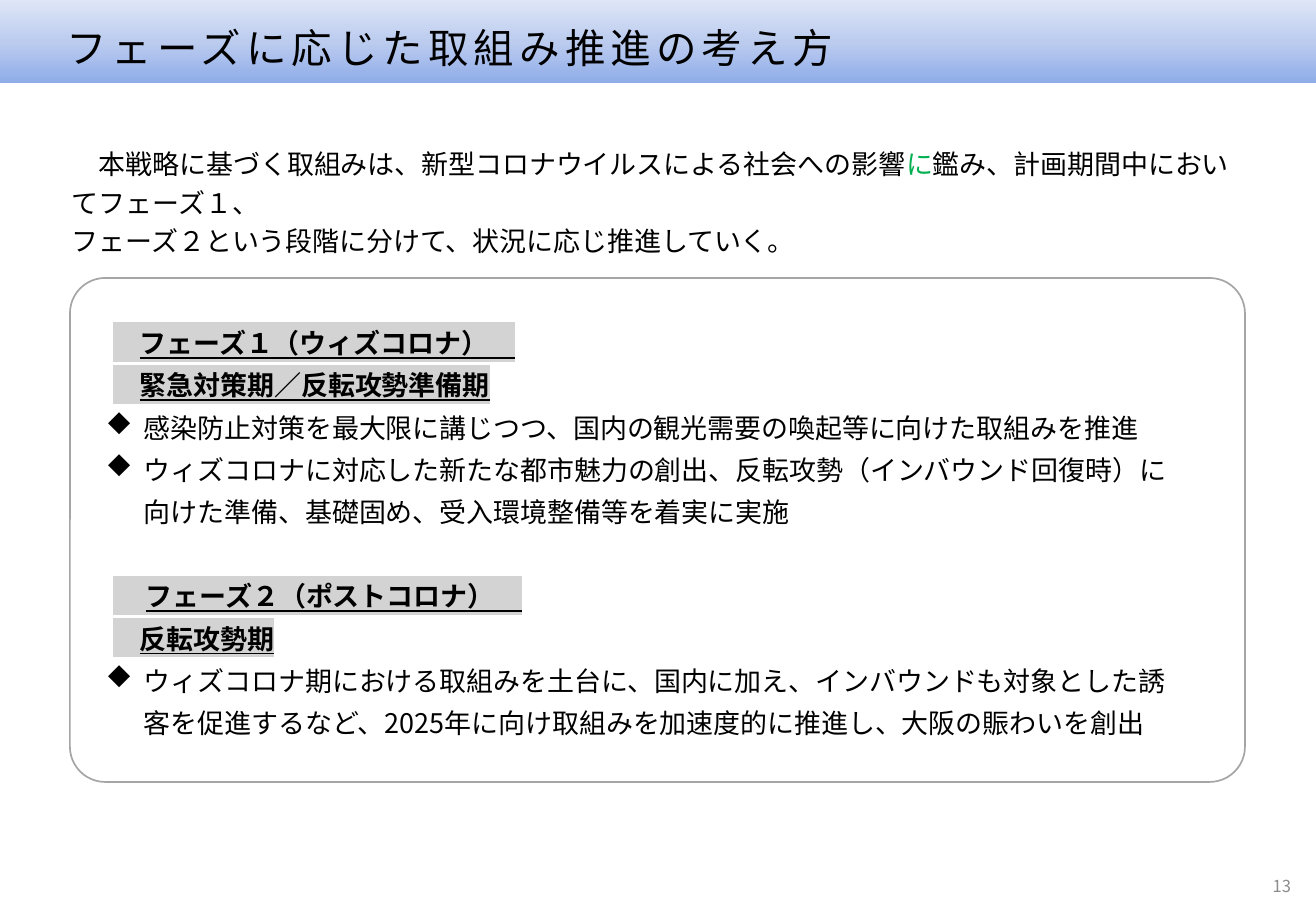
from copy import deepcopy

from pptx import Presentation
from pptx import util as u
from pptx.dml.color import RGBColor
from pptx.enum import shapes, text
from pptx.oxml.ns import qn
from lxml import etree

SCALE = 914400 / 121.5


def px(length):
    return u.Emu(round(length * SCALE))


def colour(value):
    return RGBColor.from_string(value)


def add_child(parent, tag, **attributes):
    return etree.SubElement(parent, qn(tag), attributes)


def assign(target, values):
    for name, value in values.items():
        setattr(target, name, value)


class PhasePage:
    """Holds the style and the current slide, and draws its elements."""

    font = "Noto Sans CJK JP"
    ink = "000000"
    size = 16

    def __init__(self, deck):
        self.page = deck.slides.add_slide(deck.slide_layouts[6])

    def shape(self, kind, bounds):
        box = self.page.shapes.add_shape(kind, *map(px, bounds))
        box.shadow.inherit = False
        return box

    def outline(self, bounds, line, width, corner):
        box = self.shape(shapes.MSO_SHAPE.ROUNDED_RECTANGLE, bounds)
        box.adjustments[0] = corner
        box.fill.background()
        box.line.color.rgb = colour(line)
        box.line.width = u.Pt(width)

    def band(self, bounds, stops):
        box = self.shape(shapes.MSO_SHAPE.RECTANGLE, bounds)
        box.line.fill.background()
        box.fill.gradient()
        box.fill.gradient_angle = 90
        stop_list = box._element.spPr.find(".//" + qn("a:gsLst"))
        while len(stop_list) < len(stops):
            stop_list.append(deepcopy(stop_list[0]))
        for stop, (position, value) in zip(box.fill.gradient_stops, stops):
            stop.position = position
            stop.color.rgb = colour(value)
        box.text_frame.vertical_anchor = text.MSO_ANCHOR.MIDDLE
        return box.text_frame

    def text_box(self, bounds):
        frame = self.page.shapes.add_textbox(*map(px, bounds)).text_frame
        frame.word_wrap = True
        return frame

    def span(self, para, words, ink=None, highlight=None, spacing=None, **style):
        span = para.add_run()
        span.text = words
        span.font.color.rgb = colour(ink or self.ink)
        properties = span._r.get_or_add_rPr()
        if highlight:
            add_child(add_child(properties, "a:highlight"), "a:srgbClr", val=highlight)
        if spacing:
            properties.set("spc", str(spacing * 100))
        assign(span.font, {"name": self.font, "size": u.Pt(self.size)} | style)
        add_child(properties, "a:ea", typeface=self.font)

    def para(self, frame, spans, margin=0, bullet=False, **layout):
        para = frame.paragraphs[0]
        if para.runs:
            para = frame.add_paragraph()
        assign(para, {"alignment": text.PP_ALIGN.LEFT} | layout)
        properties = para._p.get_or_add_pPr()
        properties.set("marL", str(px(margin)))
        properties.set("indent", str(px(-margin if bullet else 0)))
        if bullet:
            add_child(properties, "a:buFont", typeface="Wingdings", charset="2")
            add_child(properties, "a:buChar", char="u")
        for words, style in spans:
            self.span(para, words, **style)

    def phase(self, frame, headings, points, gap=0):
        pitch = u.Pt(25)
        label = {"bold": True, "highlight": "D3D3D3"}
        for index, (lead, heading) in enumerate(headings):
            self.para(frame, [(lead, label), (heading, label | {"underline": True})],
                      margin=7, line_spacing=pitch,
                      space_before=u.Pt(0 if index else gap))
        for point in points:
            self.para(frame, [(point, {})], margin=38, bullet=True, line_spacing=pitch)


def main():
    deck = Presentation()
    deck.slide_width, deck.slide_height = px(1316), px(911)
    page = PhasePage(deck)

    number = page.text_box((1007, 861, 296, 49))
    number.vertical_anchor = text.MSO_ANCHOR.MIDDLE
    page.para(number, [("13", {"ink": "8C8C8C", "size": u.Pt(9.8)})],
              alignment=text.PP_ALIGN.RIGHT)

    page.outline((70, 278, 1175, 504), "A5A5A5", 1, 0.07)
    phases = page.text_box((94, 311, 1098, 439))
    page.phase(phases,
               [("　", "フェーズ１（ウィズコロナ）　"), ("　", "緊急対策期／反転攻勢準備期")],
               ["感染防止対策を最大限に講じつつ、国内の観光需要の喚起等に向けた取組みを推進",
                "ウィズコロナに対応した新たな都市魅力の創出、反転攻勢（インバウンド回復時）に"
                "向けた準備、基礎固め、受入環境整備等を着実に実施"])
    page.phase(phases,
               [(" 　", "フェーズ２（ポストコロナ）　"), ("　", "反転攻勢期")],
               ["ウィズコロナ期における取組みを土台に、国内に加え、インバウンドも対象とした"
                "誘客を促進するなど、2025年に向け取組みを加速度的に推進し、大阪の賑わいを創出"],
               gap=25)

    title = page.band((0, 0, 1316, 83), [(0, "8FADE9"), (0.5, "BCCCEF"), (1, "DEE6F7")])
    page.para(title, [("　", {"size": u.Pt(32)}),
                      ("フェーズに応じた取組み推進の考え方", {"size": u.Pt(24), "spacing": 3})])

    intro = page.text_box((60, 135, 1185, 91))
    for spans in (
        [("　本戦略に基づく取組みは、新型コロナウイルスによる社会への影響", {}),
         ("に", {"ink": "00B050"}),
         ("鑑み、計画期間中においてフェーズ１、", {})],
        [("フェーズ２という段階に分けて、状況に応じ推進していく。", {})],
    ):
        page.para(intro, spans, line_spacing=u.Pt(23))

    deck.save("out.pptx")


if __name__ == "__main__":
    main()
